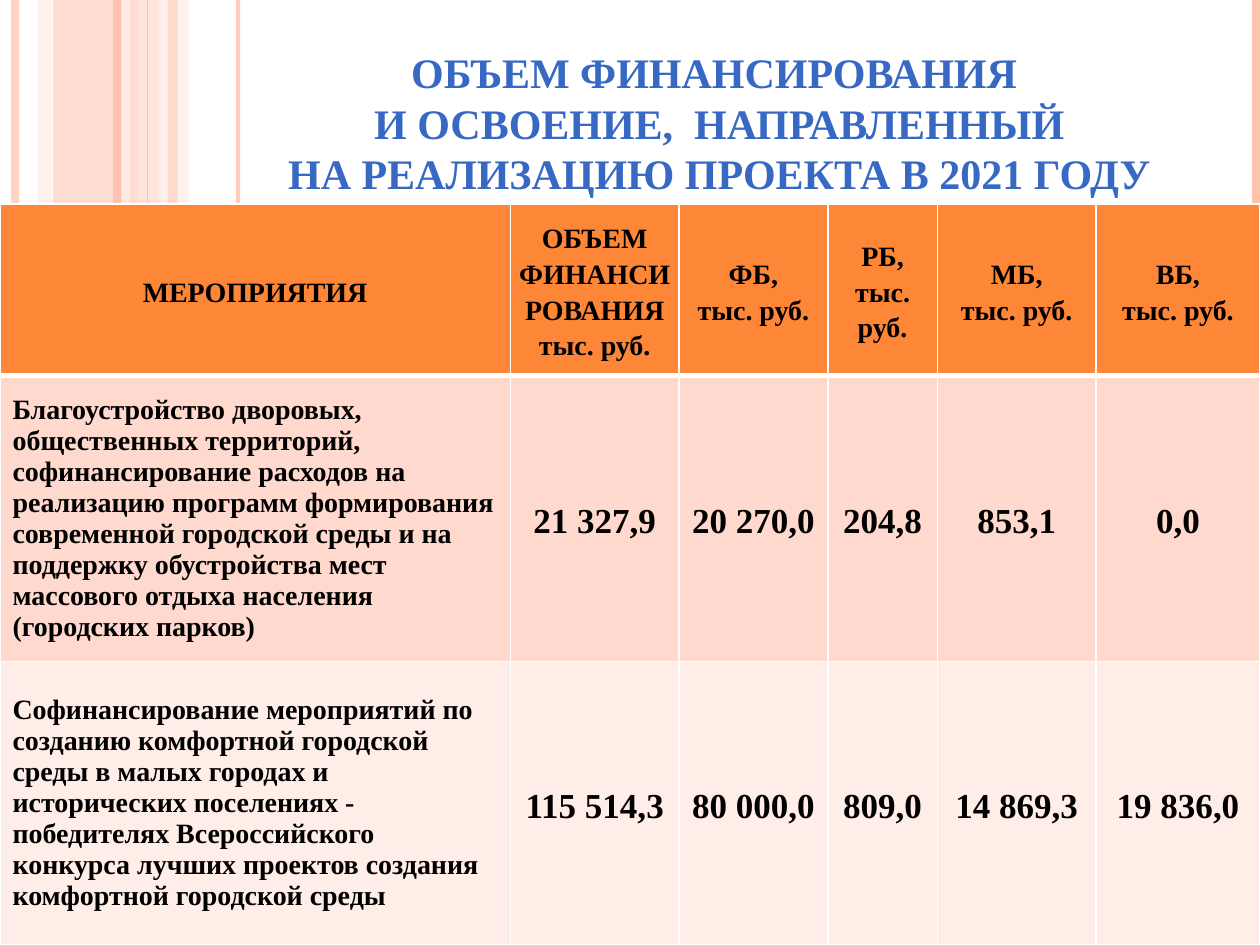
import pptx
import pptx.dml.color
import pptx.enum.shapes
import pptx.enum.text
import pptx.oxml
import pptx.oxml.ns
import pptx.util
from pptx.util import Inches

COLORS = {
    "peach": "FEC3AE", "light": "FFD9CE", "pale": "FFEDE8", "orange": "FE8637",
    "title": "3668C4", "text": "000000", "border": "FFFFFF",
}
CENTER = pptx.enum.text.PP_ALIGN.CENTER
LEFT = pptx.enum.text.PP_ALIGN.LEFT
MIDDLE = pptx.enum.text.MSO_ANCHOR.MIDDLE


def rgb(name):
    return pptx.dml.color.RGBColor.from_string(COLORS[name])


def write(frame, text, size=16, color="text", align=CENTER, spacing=None):
    """Fill a text frame: newlines part paragraphs, vertical tabs break lines."""
    for index, line in enumerate(text.split("\n")):
        paragraph = frame.paragraphs[0] if index == 0 else frame.add_paragraph()
        paragraph.text = line
        paragraph.alignment = align
        if spacing:
            paragraph.line_spacing = spacing
        for run in paragraph.runs:
            run.font.name = "Times New Roman"
            run.font.size = pptx.util.Pt(size)
            run.font.bold = True
            run.font.color.rgb = rgb(color)


presentation = pptx.Presentation()
presentation.slide_width = Inches(10)
presentation.slide_height = Inches(7.5)
slide = presentation.slides.add_slide(presentation.slide_layouts[6])

# Background stripes: kind, left or centre, width (inches or points), colour, opacity
stripes = [
    ("band", 0.42, 0.67, "peach", 54),
    ("band", 0.3, 0.11, "light", 36),
    ("band", 1.08, 0.2, "light", 70),
    ("band", 1.25, 0.25, "pale", 71),
    ("line", 0.12, 4.5, "peach", 73),
    ("line", 1, 4.5, "pale", 83),
    ("line", 0.93, 4.5, "peach", 100),
    ("line", 1.89, 2.25, "peach", 82),
    ("line", 1.17, 0.75, "peach", 100),
    ("line", 9.97, 4.5, "peach", 100),
    ("band", 1.33, 0.08, "peach", 51),
]
for kind, x, width, color, opacity in stripes:
    if kind == "band":
        shape = slide.shapes.add_shape(
            pptx.enum.shapes.MSO_SHAPE.RECTANGLE,
            Inches(x), 0, Inches(width), presentation.slide_height)
        shape.shadow.inherit = False
        shape.line.fill.background()
        fill = shape.fill
    else:
        shape = slide.shapes.add_connector(
            pptx.enum.shapes.MSO_CONNECTOR.STRAIGHT,
            Inches(x), 0, Inches(x), presentation.slide_height)
        shape.line.width = pptx.util.Pt(width)
        fill = shape.line.fill
    fill.solid()
    fill.fore_color.rgb = rgb(color)
    properties = shape._element.spPr
    if kind == "line":
        pptx.oxml.ns.qn("a:effectLst")
        properties.append(pptx.oxml.parse_xml(
            f'<a:effectLst {pptx.oxml.ns.nsdecls("a")}/>'))
    if opacity < 100:
        color_element = next(properties.iter(pptx.oxml.ns.qn("a:srgbClr")))
        color_element.append(pptx.oxml.parse_xml(
            f'<a:alpha {pptx.oxml.ns.nsdecls("a")} val="{opacity * 1000}"/>'))

title = slide.shapes.add_textbox(Inches(1.38), Inches(0.31), Inches(8.66), Inches(1.31))
title.text_frame.word_wrap = True
title.text_frame.vertical_anchor = pptx.enum.text.MSO_ANCHOR.BOTTOM
write(title.text_frame,
      "ОБЪЕМ ФИНАНСИРОВАНИЯ \n"
      "И ОСВОЕНИЕ,  НАПРАВЛЕННЫЙ\vНА РЕАЛИЗАЦИЮ ПРОЕКТА В 2021 ГОДУ",
      size=24, color="title")

rows = [
    ["МЕРОПРИЯТИЯ", "ОБЪЕМ\nФИНАНСИРОВАНИЯ\nтыс. руб.", "ФБ,\nтыс. руб.",
     "РБ,\nтыс. руб.", "МБ,\nтыс. руб.", "ВБ,\nтыс. руб."],
    ["Благоустройство дворовых, общественных территорий, софинансирование расходов "
     "на реализацию программ формирования современной городской среды и на поддержку "
     "обустройства мест массового отдыха населения (городских парков)",
     "21 327,9", "20 270,0", "204,8", "853,1", "0,0"],
    ["Софинансирование мероприятий по созданию комфортной городской среды в малых "
     "городах и исторических поселениях - победителях Всероссийского конкурса лучших "
     "проектов создания комфортной городской среды",
     "115 514,3", "80 000,0", "809,0", "14 869,3", "19 836,0"],
]
column_widths = [4.05, 1.34, 1.18, 0.87, 1.26, 1.3]
row_heights = [1.36, 2.27, 2.25]
row_fills = ["orange", "light", "pale"]

table = slide.shapes.add_table(
    len(rows), len(column_widths), 0, Inches(1.62), Inches(10), Inches(5.88)).table
table.horz_banding = False
for column, width in zip(table.columns, column_widths):
    column.width = Inches(width)
for row, height in zip(table.rows, row_heights):
    row.height = Inches(height)

for row_index, texts in enumerate(rows):
    for column_index, text in enumerate(texts):
        cell = table.cell(row_index, column_index)
        cell.vertical_anchor = MIDDLE
        is_header = row_index == 0
        if is_header:
            cell.margin_left = cell.margin_right = cell.margin_top = Inches(0.01)
            cell.margin_bottom = 0
        cell_properties = cell._tc.get_or_add_tcPr()
        for side in "LRTB":
            # The rule under the header is thicker
            thick = (row_index, side) in [(0, "B"), (1, "T")]
            cell_properties.append(pptx.oxml.parse_xml(
                f'<a:ln{side} {pptx.oxml.ns.nsdecls("a")} w="{pptx.util.Pt(3 if thick else 1)}">'
                f'<a:solidFill><a:srgbClr val="{COLORS["border"]}"/></a:solidFill></a:ln{side}>'))
        cell.fill.solid()
        cell.fill.fore_color.rgb = rgb(row_fills[row_index])
        if is_header:
            write(cell.text_frame, text, spacing=1.15)
        elif column_index == 0:
            write(cell.text_frame, text, align=LEFT)
        else:
            write(cell.text_frame, text, size=20, spacing=1.15)

presentation.save("out.pptx")
